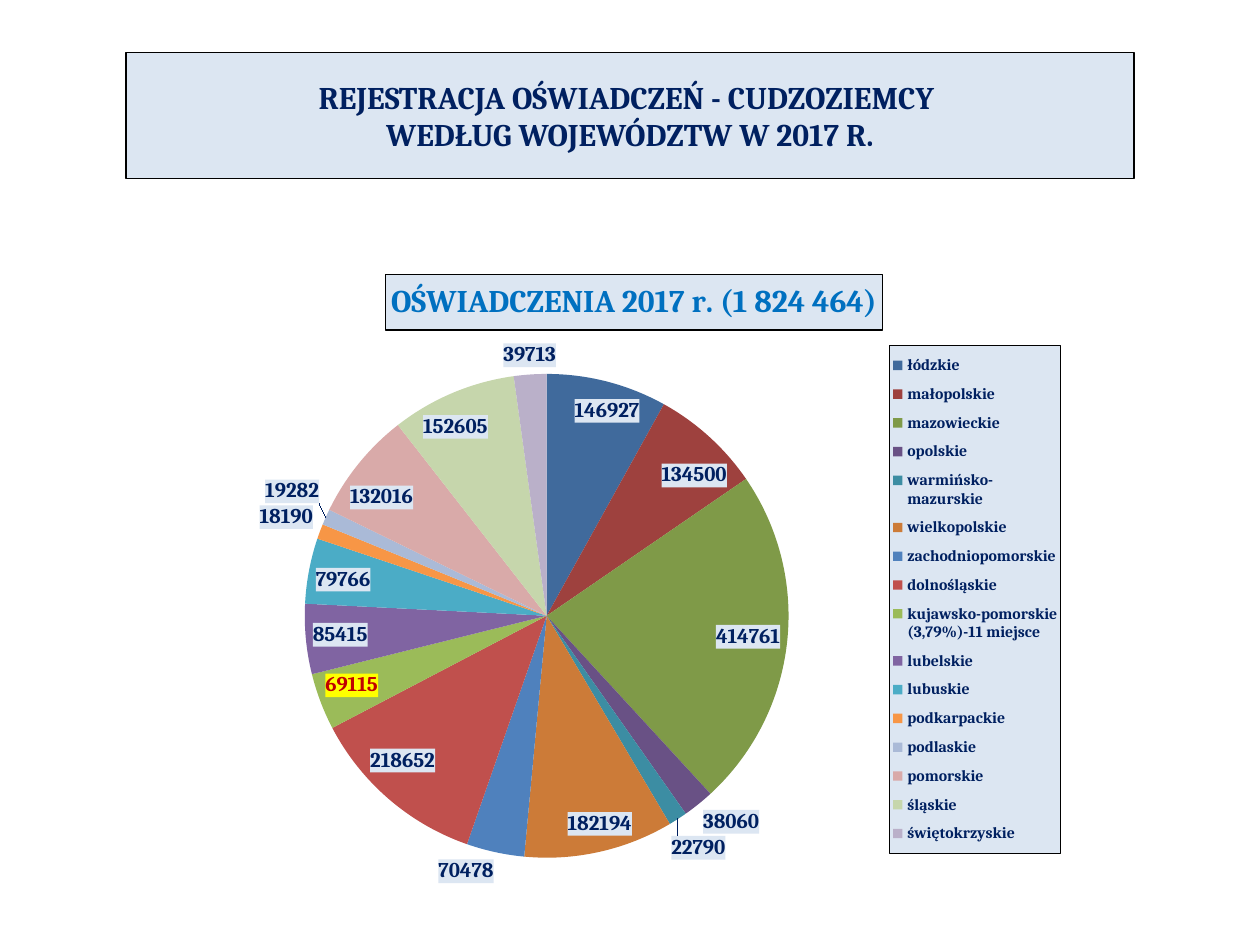
"""Build the slide on registered declarations by voivodeship."""
from pptx import Presentation
from pptx.chart.data import CategoryChartData
from pptx.dml.color import RGBColor
from pptx.enum.chart import XL_CHART_TYPE as ChartType, XL_LABEL_POSITION as LabelPosition
from pptx.enum.chart import XL_LEGEND_POSITION as LegendPosition
from pptx.enum.text import MSO_ANCHOR as Anchor, PP_ALIGN as Align
from pptx.oxml import parse_xml
from pptx.oxml.ns import nsdecls, qn
from pptx.util import Pt

COLORS = {
    "panel": "DCE6F2", "border": "000000", "navy": "002060", "heading": "0070C0",
    "highlight": "FFFF00", "alert": "C00000",
}
DECLARATIONS = [
    ("łódzkie", 146927, "406A9C"),
    ("małopolskie", 134500, "9E413E"),
    ("mazowieckie", 414761, "7F9A48"),
    ("opolskie", 38060, "695185"),
    ("warmińsko-mazurskie", 22790, "3C8DA3"),
    ("wielkopolskie", 182194, "CC7B38"),
    ("zachodniopomorskie", 70478, "4F81BD"),
    ("dolnośląskie", 218652, "C0504D"),
    ("kujawsko-pomorskie (3,79%)-11 miejsce", 69115, "9BBB59"),
    ("lubelskie", 85415, "8064A2"),
    ("lubuskie", 79766, "4BACC6"),
    ("podkarpackie", 18190, "F79646"),
    ("podlaskie", 19282, "AABAD7"),
    ("pomorskie", 132016, "D9AAA9"),
    ("śląskie", 152605, "C6D6AC"),
    ("świętokrzyskie", 39713, "BAB0C9"),
]
HIGHLIGHTED = 8


class SlideBuilder:
    """Hold the style and the current slide."""

    def __init__(self, slide, colors, family):
        self.slide = slide
        self.colors = colors
        self.family = family

    def rgb(self, name):
        return RGBColor.from_string(self.colors[name])

    def style(self, font, size, color):
        font.name = self.family
        font.size = Pt(size)
        font.bold = True
        font.color.rgb = self.rgb(color)

    def panel(self, fill, bordered):
        line = (f'<a:ln w="{Pt(0.75)}"><a:solidFill><a:srgbClr val="{self.colors["border"]}"/>'
                "</a:solidFill></a:ln>") if bordered else ""
        return parse_xml(
            f'<c:spPr {nsdecls("c", "a")}><a:solidFill><a:srgbClr val="{self.colors[fill]}"/>'
            f"</a:solidFill>{line}</c:spPr>")

    def place(self, part, follower, **edges):
        for layout in part.findall(qn("c:layout")):
            part.remove(layout)
        modes = "".join(f'<c:{key}Mode val="edge"/>' for key in "xy")
        values = "".join(f'<c:{key} val="{value}"/>' for key, value in edges.items())
        target = '<c:layoutTarget val="inner"/>' if follower == "c:pieChart" else ""
        part.find(qn(follower)).addprevious(parse_xml(
            f'<c:layout {nsdecls("c")}><c:manualLayout>{target}{modes}{values}'
            "</c:manualLayout></c:layout>"))

    def title(self, text, left, top, width, height):
        title = self.slide.shapes.title
        title.left, title.top, title.width, title.height = map(Pt, (left, top, width, height))
        title.fill.solid()
        title.fill.fore_color.rgb = self.rgb("panel")
        title.line.color.rgb = self.rgb("border")
        title.line.width = Pt(0.75)
        title.text_frame.vertical_anchor = Anchor.MIDDLE
        paragraph = title.text_frame.paragraphs[0]
        paragraph.text = text
        paragraph.alignment = Align.CENTER
        for run in paragraph.runs:
            self.style(run.font, 18, "navy")

    def pie(self, heading, rows, left, top, width, height):
        names, counts, fills = zip(*rows)
        data = CategoryChartData()
        data.categories = names
        data.add_series("Series 1", counts)
        chart = self.slide.shapes.add_chart(
            ChartType.PIE, *map(Pt, (left, top, width, height)), data).chart
        chart.font.name, chart.font.size = "Calibri", Pt(18)
        chart.plots[0].vary_by_categories = True
        self.place(chart.element.chart.plotArea, "c:pieChart", x=0.18, y=0.18, w=0.48, h=0.75)
        self.heading(chart, heading)
        self.legend(chart)
        series = chart.plots[0].series[0]
        for index, fill in enumerate(fills):
            slice_fill = series.points[index].format.fill
            slice_fill.solid()
            slice_fill.fore_color.rgb = RGBColor.from_string(fill)
        self.labels(series)

    def heading(self, chart, text):
        chart.has_title = True
        frame = chart.chart_title.text_frame
        frame.text = text
        self.style(frame.paragraphs[0].runs[0].font, 18, "heading")
        element = chart.chart_title.element if hasattr(chart.chart_title, "element") \
            else chart.element.chart.find(qn("c:title"))
        self.place(element, "c:overlay", x=0.26, y=0.03)
        element.find(qn("c:overlay")).addnext(self.panel("panel", True))

    def legend(self, chart):
        chart.has_legend = True
        legend = chart.legend
        legend.position = LegendPosition.RIGHT
        legend.include_in_layout = False
        self.style(legend.font, 9, "navy")
        element = chart.element.chart.find(qn("c:legend"))
        self.place(element, "c:overlay", x=0.76, y=0.14, w=0.17, h=0.78)
        element.find(qn("c:overlay")).addnext(self.panel("panel", True))

    def labels(self, series):
        labels = series.data_labels
        labels.show_value = True
        labels.position = LabelPosition.BEST_FIT
        self.style(labels.font, 12, "navy")
        label = series.points[HIGHLIGHTED].data_label
        self.style(label.font, 12, "alert")
        label.position = LabelPosition.BEST_FIT
        group = series.data_labels._element
        for element, fill in ((group, "panel"), (group.find(qn("c:dLbl")), "highlight")):
            element.find(qn("c:txPr")).addprevious(self.panel(fill, False))


def main():
    deck = Presentation()
    deck.slide_width, deck.slide_height = Pt(720), Pt(540)
    builder = SlideBuilder(deck.slides.add_slide(deck.slide_layouts[5]), COLORS, "Cambria")
    builder.title("REJESTRACJA OŚWIADCZEŃ - CUDZOZIEMCY \vWEDŁUG WOJEWÓDZTW W 2017 R.",
                  72, 30, 576, 72)
    builder.pie("OŚWIADCZENIA 2017 r. (1 824 464)", DECLARATIONS, 70.5, 145.5, 576, 372)
    deck.save("out.pptx")


if __name__ == "__main__":
    main()
